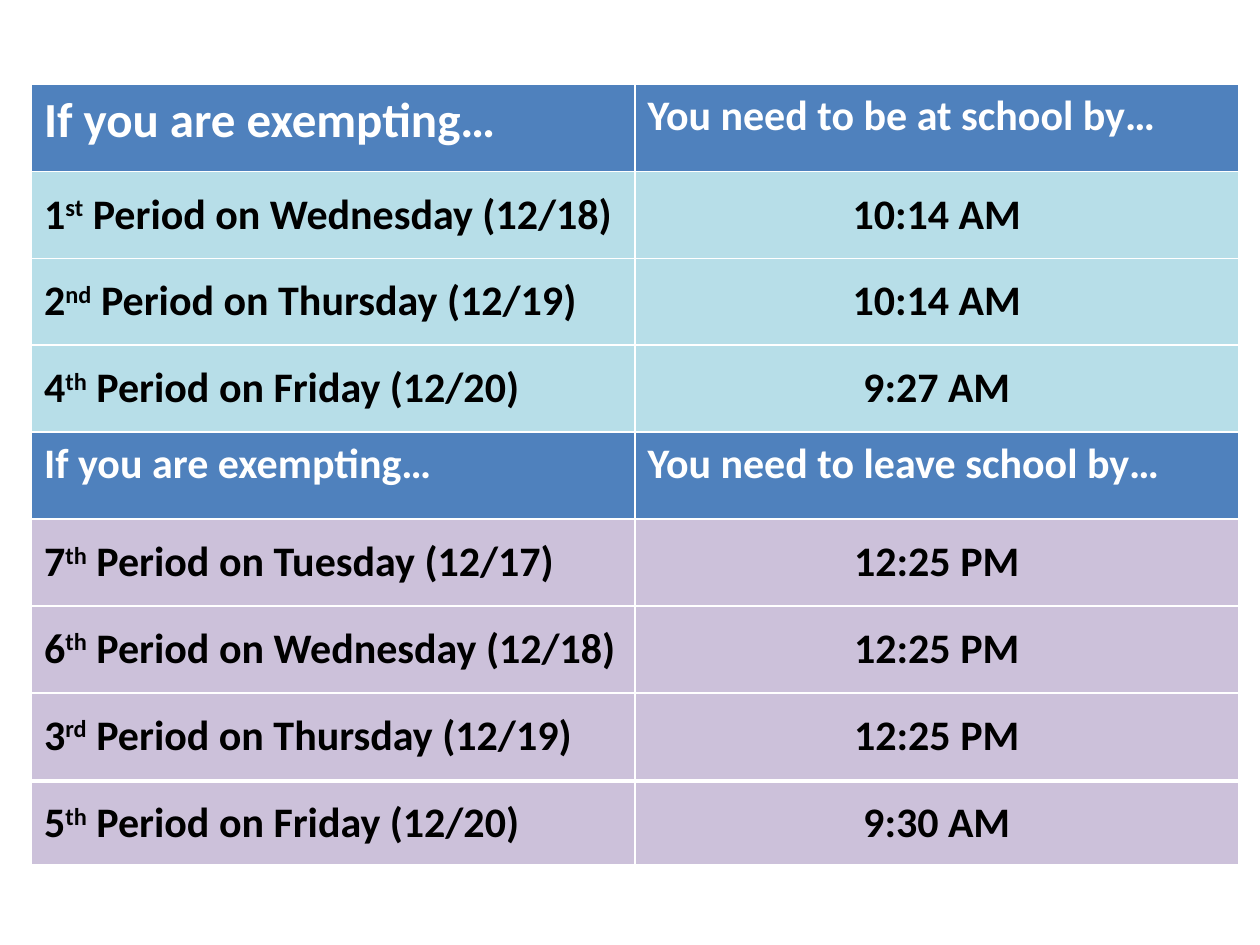
from pptx import Presentation
from pptx.dml.color import RGBColor
from pptx.enum.text import MSO_ANCHOR as Anchor, PP_ALIGN as Align
from pptx.util import Inches, Pt

BLUE, TEAL, LILAC = "4F81BD", "B7DEE8", "CCC1DA"
WHITE, BLACK = "FFFFFF", "000000"


def color(code):
    return RGBColor.from_string(code)


def write(cell, parts, fill, ink, size=24):
    """Fill a cell; the second of several parts is a superscript."""
    cell.fill.solid()
    cell.fill.fore_color.rgb = color(fill)
    para = cell.text_frame.paragraphs[0]
    for i, part in enumerate(parts):
        run = para.add_run()
        run.text = part
        look = {"name": "Calibri", "size": Pt(size), "bold": True}
        for key, value in look.items():
            setattr(run.font, key, value)
        run.font.color.rgb = color(ink)
        if i == 1:
            run._r.get_or_add_rPr().set("baseline", "30000")


# A row is a heading (text, text, size) or a period (number, suffix, day, time, fill).
main = [
    ("If you are exempting…", "You need to be at school by…", 28),
    ("1", "st", "Wednesday (12/18)", "10:14 AM", TEAL),
    ("2", "nd", "Thursday (12/19)", "10:14 AM", TEAL),
    ("4", "th", "Friday (12/20)", "9:27 AM", TEAL),
    ("If you are exempting…", "You need to leave school by…", 24),
    ("7", "th", "Tuesday (12/17)", "12:25 PM", LILAC),
    ("6", "th", "Wednesday (12/18)", "12:25 PM", LILAC),
    ("3", "rd", "Thursday (12/19)", "12:25 PM", LILAC),
]
last = [("5", "th", "Friday (12/20)", "9:30 AM", LILAC)]

prs = Presentation()
prs.slide_width, prs.slide_height = Inches(10), Inches(7.5)
slide = prs.slides.add_slide(prs.slide_layouts[6])

for rows, top, height in ((main, 0.67, 0.69), (last, 6.21, 0.65)):
    frame = slide.shapes.add_table(
        len(rows), 2, Inches(0.25), Inches(top), Inches(9.58), Inches(height * len(rows)))
    table = frame.table
    table.horz_banding = False
    for r, row in enumerate(rows):
        table.rows[r].height = Inches(height)
        left, right = table.cell(r, 0), table.cell(r, 1)
        if len(row) == 3:
            head, need, size = row
            write(left, [head], BLUE, WHITE, size)
            write(right, [need], BLUE, WHITE)
        else:
            num, suffix, day, time, fill = row
            write(left, [num, suffix, f" Period on {day}"], fill, BLACK)
            write(right, [time], fill, BLACK)
            right.text_frame.paragraphs[0].alignment = Align.CENTER
            left.vertical_anchor = right.vertical_anchor = Anchor.MIDDLE

prs.save("out.pptx")
